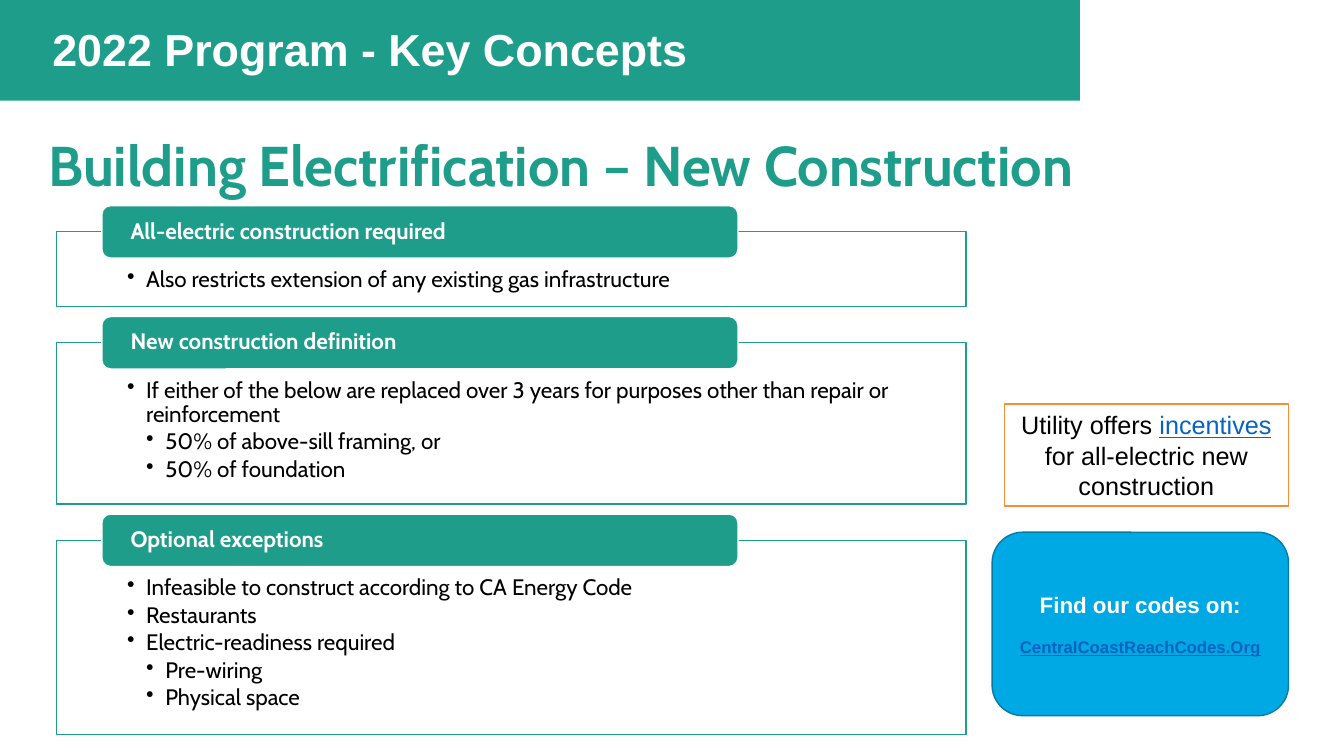
from pptx import Presentation
from pptx.dml.color import RGBColor as Rgb
from pptx.enum.shapes import MSO_SHAPE as Kind
from pptx.enum.text import MSO_ANCHOR as Anchor, PP_ALIGN as Align
from pptx.oxml.ns import qn
from pptx.util import Inches, Pt
from lxml.etree import SubElement

HUES = {"teal": "1E9D8B", "white": "FFFFFF", "black": "000000", "blue": "00A8E4",
        "navy": "007CA9", "link": "0563C1", "orange": "F68D39"}
CARDS = [
    (0.74, "All-electric construction required",
     [(0, "Also restricts extension of any existing gas infrastructure")]),
    (1.6, "New construction definition",
     [(0, "If either of the below are replaced over 3 years for purposes "
          "other than repair or reinforcement"),
      (1, "50% of above-sill framing, or"),
      (1, "50% of foundation")]),
    (1.93, "Optional exceptions",
     [(0, "Infeasible to construct according to CA Energy Code"),
      (0, "Restaurants"),
      (0, "Electric-readiness required"),
      (1, "Pre-wiring"),
      (1, "Physical space")]),
]


class Deck:
    """Holds the style and the current slide."""

    def __init__(self):
        self.prs = Presentation()
        self.prs.slide_width, self.prs.slide_height = Inches(13.33), Inches(7.5)
        self.slide = self.prs.slides.add_slide(self.prs.slide_layouts[5])

    def hue(self, name):
        """Gives the colour of a name."""
        return Rgb.from_string(HUES[name])

    def style(self, run, size, hue, face="Arial", bold=False, under=False):
        """Formats one run."""
        font = run.font
        font.name, font.size, font.bold = face, Pt(size), bold
        font.underline = under
        font.color.rgb = self.hue(hue)

    def frame(self, shape, anchor, pads=(0.1, 0.05, 0.1, 0.05)):
        """Sets wrapping, anchor and insets of a shape's text."""
        text = shape.text_frame
        text.word_wrap, text.vertical_anchor = True, anchor
        (text.margin_left, text.margin_top,
         text.margin_right, text.margin_bottom) = map(Inches, pads)
        return text

    def line(self, text, words, *look, align=Align.LEFT, space=0.9):
        """Writes the first paragraph of a text frame."""
        text.text = words
        para = text.paragraphs[0]
        para.alignment, para.line_spacing = align, space
        self.style(para.runs[0], *look)

    def shape(self, box, fill, edge=None, kind=Kind.RECTANGLE):
        """Adds a filled shape."""
        shape = self.slide.shapes.add_shape(kind, *map(Inches, box))
        shape.shadow.inherit = False
        shape.fill.solid()
        shape.fill.fore_color.rgb = self.hue(fill)
        if edge:
            shape.line.color.rgb = self.hue(edge)
            shape.line.width = Pt(1)
        else:
            shape.line.fill.background()
        return shape

    def title(self, words, box):
        """Places and formats the title."""
        shape = self.slide.shapes.title
        shape.left, shape.top, shape.width, shape.height = map(Inches, box)
        text = self.frame(shape, Anchor.BOTTOM)
        self.line(text, words, 40, "teal", "Cabin", True)

    def label(self, words, box):
        """Adds the banner text."""
        shape = self.slide.shapes.add_textbox(*map(Inches, box))
        text = self.frame(shape, Anchor.MIDDLE)
        self.line(text, words, 32, "white", "Arial", True)

    def bullet(self, para, level, words):
        """Writes one bulleted paragraph."""
        para.text = words
        para.level = level + 1
        props = para._p.get_or_add_pPr()
        props.set("marL", str(Inches(0.19 * (level + 1))))
        props.set("indent", str(Inches(-0.19)))
        SubElement(props, qn("a:buChar")).set("char", "•")
        para.alignment, para.line_spacing = Align.LEFT, 0.9
        para.space_after = Pt(2.4)
        self.style(para.runs[0], 16, "black", "Cabin")

    def card(self, top, high, head, items):
        """Adds an outlined list with a heading tab."""
        body = self.shape((0.56, top, 9.02, high), "white", "teal")
        text = self.frame(body, Anchor.TOP, (0.7, 0.36, 0.7, 0.12))
        for num, item in enumerate(items):
            para = text.add_paragraph() if num else text.paragraphs[0]
            self.bullet(para, *item)
        tab = self.shape((1.01, top - 0.26, 6.31, 0.52), "teal", "white",
                         Kind.ROUNDED_RECTANGLE)
        text = self.frame(tab, Anchor.MIDDLE, (0.26, 0, 0.26, 0))
        self.line(text, head, 16, "white", "Cabin", True)

    def find(self, head, site, box):
        """Adds the rounded panel with the web address."""
        shape = self.shape(box, "blue", "navy", Kind.ROUNDED_RECTANGLE)
        text = self.frame(shape, Anchor.MIDDLE)
        self.line(text, head, 16, "white", "Arial", True,
                  align=Align.CENTER, space=1)
        para = text.add_paragraph()
        para.text = site
        para.alignment, para.space_before = Align.CENTER, Pt(14)
        self.style(para.runs[0], 12, "link", bold=True, under=True)

    def offer(self, parts, box):
        """Adds the outlined note with one underlined part."""
        shape = self.shape(box, "white", "orange")
        para = self.frame(shape, Anchor.MIDDLE).paragraphs[0]
        para.alignment = Align.CENTER
        for words, link in parts:
            run = para.add_run()
            run.text = words
            self.style(run, 18, "link" if link else "black", under=link)


def main():
    """Builds and saves the slide."""
    deck = Deck()
    deck.shape((0, 0, 10.71, 1), "teal")
    deck.title("Building Electrification – New Construction", (0.38, 1.2, 12.92, 0.82))
    deck.label("2022 Program - Key Concepts", (0.42, 0.17, 6.81, 0.7))
    top = 2.3
    for high, head, items in CARDS:
        deck.card(top, high, head, items)
        top += high + 0.36
    deck.find("Find our codes on:", "CentralCoastReachCodes.Org",
              (9.84, 5.28, 2.94, 1.82))
    deck.offer([("Utility offers ", False), ("incentives", True),
                (" for all-electric new construction", False)],
               (9.96, 4.01, 2.82, 1.01))
    deck.prs.save("out.pptx")


if __name__ == "__main__":
    main()
